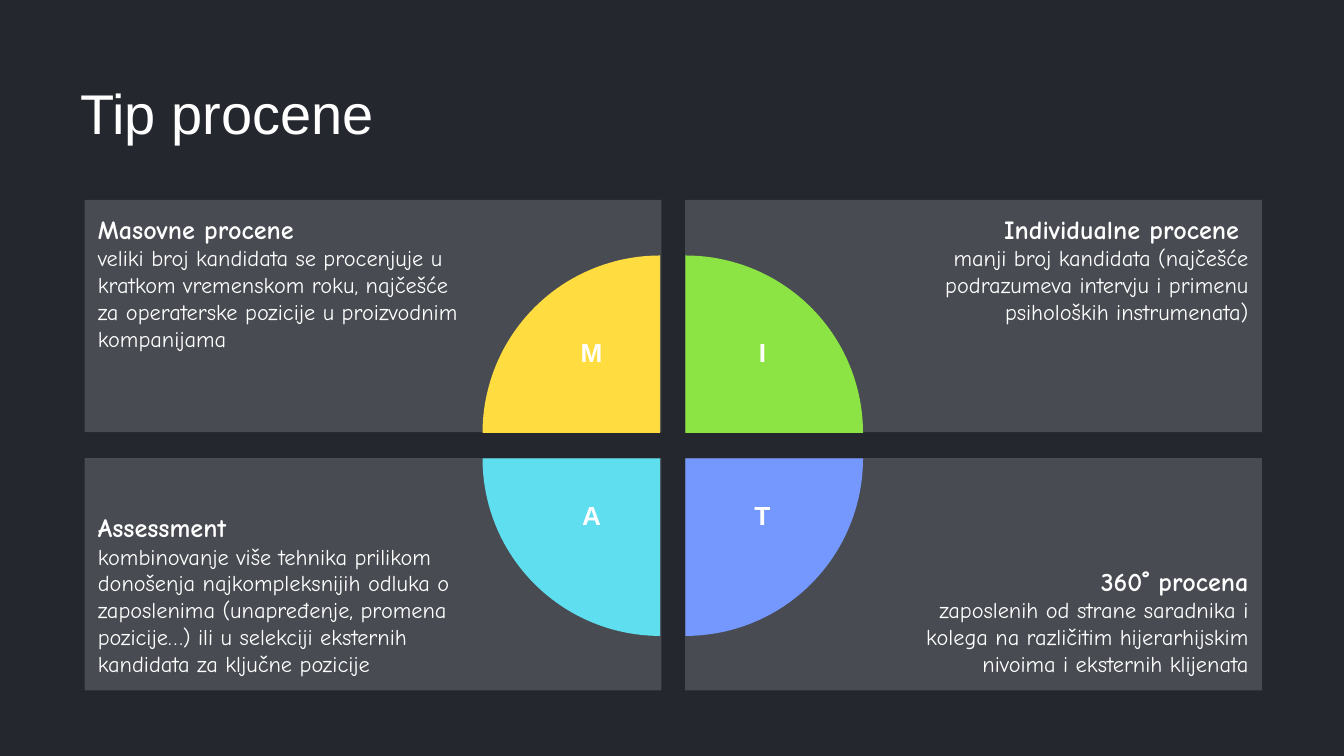
from dataclasses import dataclass

from lxml import etree
from pptx import Presentation
from pptx.dml.color import RGBColor
from pptx.enum import shapes, text
from pptx.oxml import ns
from pptx.util import Cm, Pt

DARK = RGBColor(0x24, 0x27, 0x2E)
WHITE = RGBColor(0xFF, 0xFF, 0xFF)
GOLD = RGBColor(0xFF, 0xDD, 0x41)
GREEN = RGBColor(0x8C, 0xE4, 0x44)
CYAN = RGBColor(0x5F, 0xDE, 0xF0)
BLUE = RGBColor(0x75, 0x98, 0xFF)
HEAD, BODY = "Arial", "Comic Neue"


@dataclass
class Type:
    col: int
    row: int
    mark: str
    color: RGBColor
    turn: int
    head: str
    body: str


TYPES = [
    Type(0, 0, "M", GOLD, 0, "Masovne procene",
         "veliki broj kandidata se procenjuje u kratkom vremenskom roku, "
         "najčešće za operaterske pozicije u proizvodnim kompanijama"),
    Type(1, 0, "I", GREEN, 90, "Individualne procene ",
         "manji broj kandidata (najčešće podrazumeva intervju i primenu "
         "psiholoških instrumenata)"),
    Type(0, 1, "A", CYAN, 270, "Assessment",
         "kombinovanje više tehnika prilikom donošenja najkompleksnijih odluka "
         "o zaposlenima (unapređenje, promena pozicije…) ili u selekciji "
         "eksternih kandidata za ključne pozicije"),
    Type(1, 1, "T", BLUE, 180, "360˚ procena",
         "zaposlenih od strane saradnika i kolega na različitim hijerarhijskim "
         "nivoima i eksternih klijenata"),
]


def add_run(para, words: str, size: int, font: str, bold: bool = False) -> None:
    run = para.add_run()
    run.text = words
    run.font.size = Pt(size)
    run.font.name = font
    run.font.bold = bold
    run.font.color.rgb = WHITE


def add_shape(slide, kind, left, top, width, height, color: RGBColor):
    shape = slide.shapes.add_shape(kind, left, top, width, height)
    shape.shadow.inherit = False
    shape.fill.solid()
    shape.fill.fore_color.rgb = color
    shape.line.fill.background()
    return shape


def draw_panel(slide, item: Type) -> None:
    panel = add_shape(slide, shapes.MSO_SHAPE.RECTANGLE,
                      Cm(1.6 + 11.35 * item.col), Cm(3.78 + 4.88 * item.row),
                      Cm(10.9), Cm(4.39), WHITE)
    # Make the white fill mostly transparent
    tint = panel.fill._xPr.find(".//" + ns.qn("a:srgbClr"))
    etree.SubElement(tint, ns.qn("a:alpha"), val="17000")

    # Keep the text clear of the pie
    frame = panel.text_frame
    frame.word_wrap = True
    near, far = Cm(0.25), Cm(3.81)
    frame.margin_left, frame.margin_right = (far, near) if item.col else (near, far)
    frame.margin_top = frame.margin_bottom = near
    frame.vertical_anchor = text.MSO_ANCHOR.BOTTOM if item.row else text.MSO_ANCHOR.TOP
    head, body = frame.paragraphs[0], frame.add_paragraph()
    for para in (head, body):
        para.alignment = text.PP_ALIGN.RIGHT if item.col else text.PP_ALIGN.LEFT
    add_run(head, item.head, 14, BODY, True)
    add_run(body, item.body, 12, BODY)


def draw_pie(slide, item: Type) -> None:
    pie = add_shape(slide, shapes.MSO_SHAPE.PIE,
                    Cm(9.12 + 0.48 * item.col), Cm(4.83 + 0.48 * item.row),
                    Cm(6.71), Cm(6.71), item.color)
    # Quarter from 180 to 270 degrees
    pie.adjustments[0] = 108
    pie.adjustments[1] = 162
    pie.rotation = item.turn


def draw_mark(slide, item: Type) -> None:
    box = slide.shapes.add_textbox(Cm(10.58 + 3.23 * item.col),
                                   Cm(6.24 + 3.07 * item.row), Cm(1.2), Cm(1.3))
    box.text_frame.word_wrap = True
    para = box.text_frame.paragraphs[0]
    para.alignment = text.PP_ALIGN.CENTER
    add_run(para, item.mark, 14, HEAD, True)


def draw_title(slide, words: str) -> None:
    title = slide.shapes.title
    title.left, title.top = Cm(1.52), Cm(1.65)
    title.width, title.height = Cm(17.12), Cm(1.09)
    frame = title.text_frame
    frame.margin_left = frame.margin_right = 0
    frame.margin_top = frame.margin_bottom = 0
    frame.auto_size = text.MSO_AUTO_SIZE.NONE
    frame.vertical_anchor = text.MSO_ANCHOR.MIDDLE
    para = frame.paragraphs[0]
    para.alignment = text.PP_ALIGN.LEFT
    para.line_spacing = 0.9
    add_run(para, words, 30, HEAD)


def main() -> None:
    deck = Presentation()
    deck.slide_width, deck.slide_height = Cm(25.4), Cm(14.29)
    slide = deck.slides.add_slide(deck.slide_layouts[5])
    slide.background.fill.solid()
    slide.background.fill.fore_color.rgb = DARK

    draw_title(slide, "Tip procene")
    # Panels at the back, then pies, then letters
    for draw in (draw_panel, draw_pie, draw_mark):
        for item in TYPES:
            draw(slide, item)
    deck.save("out.pptx")


if __name__ == "__main__":
    main()
